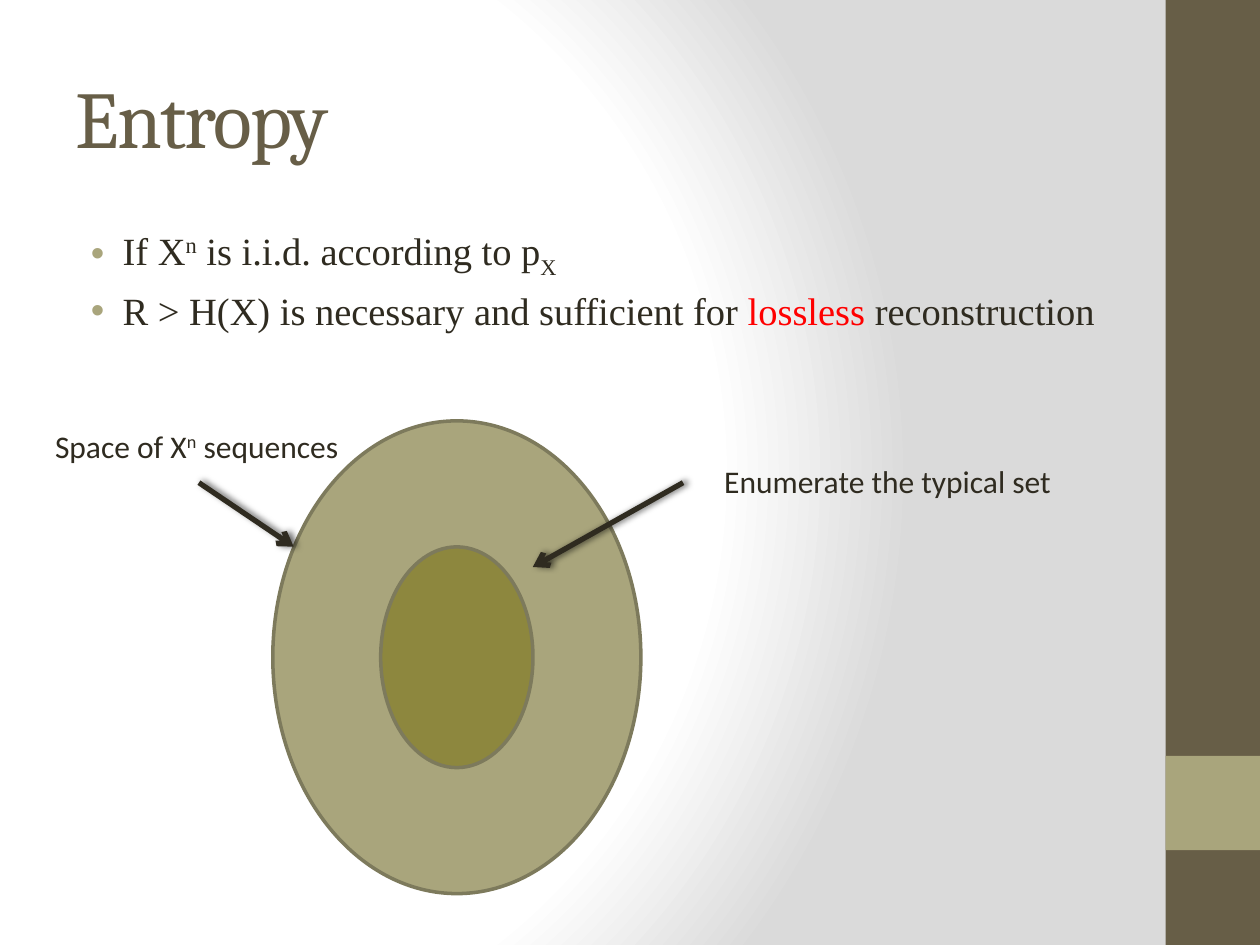
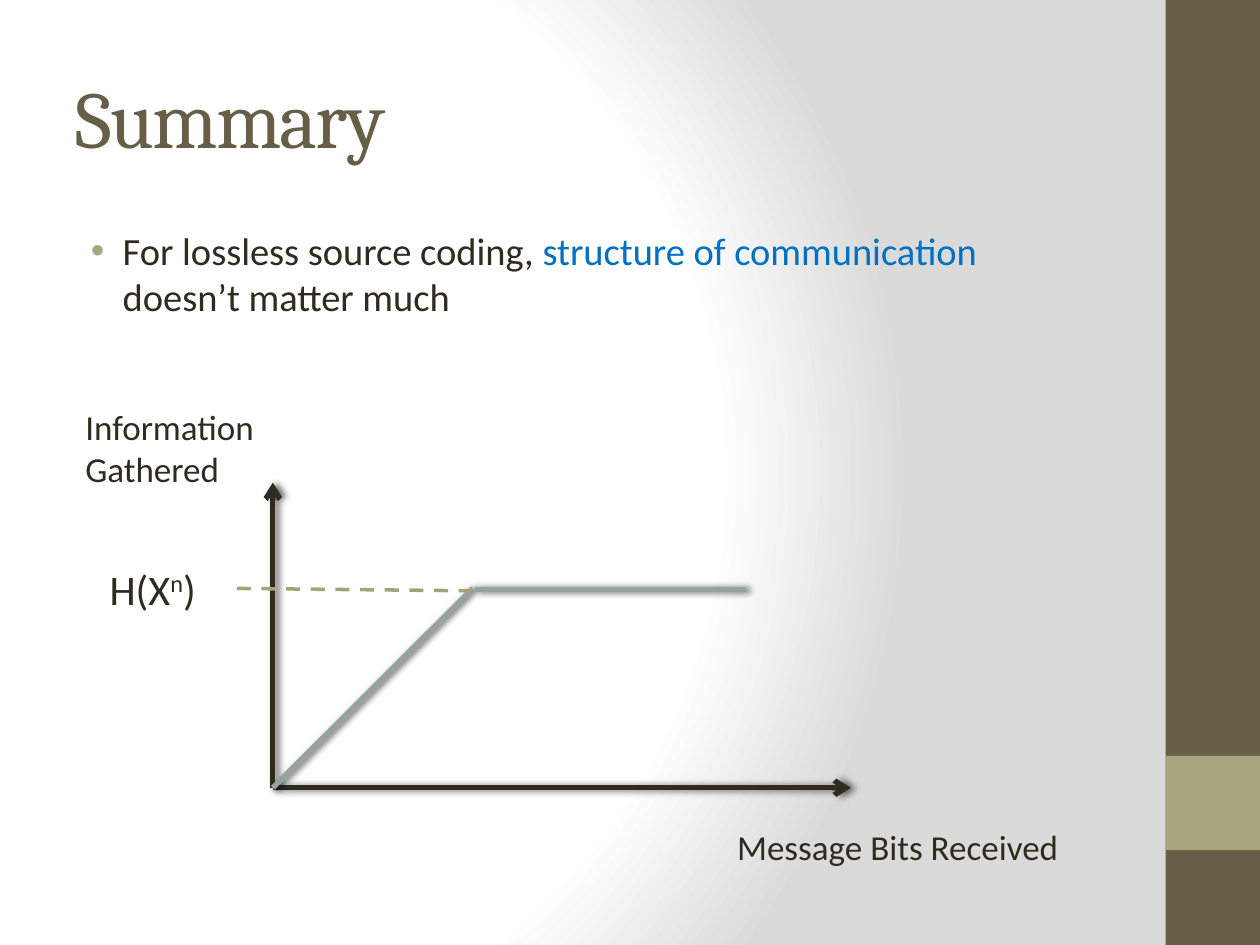
from dataclasses import dataclass

from pptx import Presentation, util as u
from pptx.dml.color import RGBColor
from pptx.enum import dml, shapes, text
from pptx.oxml import parse_xml
from pptx.oxml.ns import nsdecls, qn
from pptx.presentation import Presentation as Deck
from pptx.slide import Slide
from pptx.text.text import TextFrame

SUPERSCRIPT, SUBSCRIPT = 30, -25


@dataclass(frozen=True)
class Theme:
    ink: str = "2F2B20"
    brown: str = "675E47"
    sand: str = "A9A57C"
    olive: str = "8D873E"
    outline: str = "7D7A5C"
    curve: str = "95A39D"
    guide: str = "A6A278"
    red: str = "FF0000"
    blue: str = "0070C0"
    backdrop: tuple[tuple[int, str], ...] = ((0, "FFFFFF"), (75, "FFFFFF"), (100, "DADADA"))
    heading_font: str = "Cambria"
    body_font: str = "Calibri"
    serif_font: str = "Times New Roman"
    title_size: int = 46
    bullet_size: int = 22
    label_size: int = 18
    axis_size: int = 20
    value_size: int = 24


THEME = Theme()


@dataclass(frozen=True)
class Piece:
    """A stretch of text in one colour, raised or lowered by a percentage."""
    words: str
    color: str = THEME.ink
    baseline: int = 0


Line = tuple[Piece, ...]


@dataclass(frozen=True)
class Box:
    """Left, top, width and height in centimetres."""
    left: float
    top: float
    width: float
    height: float

    def lengths(self) -> tuple[u.Length, ...]:
        return tuple(u.Cm(n) for n in (self.left, self.top, self.width, self.height))


@dataclass(frozen=True)
class Label:
    box: Box
    lines: tuple[Line, ...]
    size: int = THEME.label_size


@dataclass(frozen=True)
class Stroke:
    start: tuple[float, float]
    end: tuple[float, float]
    color: str = THEME.ink
    width: int = 3
    arrow: bool = False
    dashed: bool = False
    shadow: bool = True


TITLE_BOX = Box(1.27, 0.76, 21.16, 3.18)
BODY_BOX = Box(1.27, 4.45, 21.16, 13.34)
BANDS = ((Box(23.5, 0, 1.9, 19.05), THEME.brown), (Box(23.5, 15.24, 1.9, 1.9), THEME.sand))


def xml(fragment: str):
    """Parse a fragment whose root tag lacks namespace declarations."""
    head, mark, rest = fragment.partition(" ")
    return parse_xml(f"{head} {nsdecls('a', 'p')}{mark}{rest}")


def fill_lines(frame: TextFrame, lines: tuple[Line, ...], font: str, size: int) -> None:
    for index, line in enumerate(lines):
        paragraph = frame.paragraphs[0] if index == 0 else frame.add_paragraph()
        for piece in line:
            run = paragraph.add_run()
            run.text = piece.words
            run.font.name, run.font.size = font, u.Pt(size)
            run.font.color.rgb = RGBColor.from_string(piece.color)
            if piece.baseline:
                run._r.get_or_add_rPr().set("baseline", str(piece.baseline * 1000))


def place(shape, box: Box) -> None:
    shape.left, shape.top, shape.width, shape.height = box.lengths()


def add_filled(slide: Slide, kind: shapes.MSO_SHAPE, box: Box, color: str, outline: str = ""):
    shape = slide.shapes.add_shape(kind, *box.lengths())
    shape.shadow.inherit = False
    shape.fill.solid()
    shape.fill.fore_color.rgb = RGBColor.from_string(color)
    if outline:
        shape.line.color.rgb = RGBColor.from_string(outline)
        shape.line.width = u.Pt(2)
    else:
        shape.line.fill.background()
    return shape


def add_label(slide: Slide, label: Label) -> None:
    frame = slide.shapes.add_textbox(*label.box.lengths()).text_frame
    frame.word_wrap = False
    frame.auto_size = text.MSO_AUTO_SIZE.SHAPE_TO_FIT_TEXT
    fill_lines(frame, label.lines, THEME.body_font, label.size)


def add_stroke(slide: Slide, stroke: Stroke) -> None:
    ends = (u.Cm(n) for n in stroke.start + stroke.end)
    connector = slide.shapes.add_connector(shapes.MSO_CONNECTOR.STRAIGHT, *ends)
    connector.line.color.rgb = RGBColor.from_string(stroke.color)
    connector.line.width = u.Pt(stroke.width)
    if stroke.dashed:
        connector.line.dash_style = dml.MSO_LINE.DASH
    properties = connector.element.spPr
    if stroke.arrow:
        properties.find(qn("a:ln")).append(xml('<a:tailEnd type="arrow"/>'))
    shadow = (f'<a:outerShdw blurRad="{u.Pt(4)}" dist="{u.Pt(2)}" dir="0" rotWithShape="0">'
              '<a:srgbClr val="000000"><a:alpha val="60000"/></a:srgbClr></a:outerShdw>')
    properties.append(xml(f"<a:effectLst >{shadow if stroke.shadow else ''}</a:effectLst>"))


def style_master(deck: Deck, slide: Slide) -> None:
    """Give the master the gradient backdrop and the side bands, drawn first on a slide."""
    content = deck.slide_master.element.cSld
    for old in content.findall(qn("p:bg")):
        content.remove(old)
    stops = "".join(f'<a:gs pos="{at * 1000}"><a:srgbClr val="{color}"/></a:gs>'
                    for at, color in THEME.backdrop)
    content.insert(0, xml(
        f'<p:bg ><p:bgPr><a:gradFill rotWithShape="1"><a:gsLst>{stops}</a:gsLst>'
        '<a:path path="circle"><a:fillToRect l="20000" t="50000" r="100000" b="50000"/></a:path>'
        '</a:gradFill><a:effectLst/></p:bgPr></p:bg>'))
    for index, (box, color) in enumerate(BANDS):
        band = add_filled(slide, shapes.MSO_SHAPE.RECTANGLE, box, color).element
        band.nvSpPr.cNvPr.set("id", str(100 + index))
        content.spTree.insert(2 + index, band)


def write_title(slide: Slide, title: str) -> None:
    place(slide.shapes.title, TITLE_BOX)
    frame = slide.shapes.title.text_frame
    frame.auto_size = text.MSO_AUTO_SIZE.NONE
    frame.vertical_anchor = text.MSO_ANCHOR.MIDDLE
    fill_lines(frame, ((Piece(title, THEME.brown),),), THEME.heading_font, THEME.title_size)
    paragraph = frame.paragraphs[0]
    paragraph.alignment = text.PP_ALIGN.LEFT
    paragraph.runs[0]._r.get_or_add_rPr().set("spc", "-100")


def write_bullets(slide: Slide, bullets: tuple[Line, ...], font: str) -> None:
    body = slide.placeholders[1]
    place(body, BODY_BOX)
    body.text_frame.auto_size = text.MSO_AUTO_SIZE.NONE
    fill_lines(body.text_frame, bullets, font, THEME.bullet_size)
    for paragraph in body.text_frame.paragraphs:
        properties = paragraph._p.get_or_add_pPr()
        properties.set("marL", str(u.Cm(0.95)))
        properties.set("indent", str(u.Cm(-0.64)))
        for fragment in ('<a:spcBef ><a:spcPct val="20000"/></a:spcBef>',
                         f'<a:buClr ><a:srgbClr val="{THEME.sand}"/></a:buClr>',
                         '<a:buFont typeface="Arial"/>',
                         '<a:buChar char="•"/>'):
            properties.append(xml(fragment))


def draw_entropy(slide: Slide) -> None:
    write_title(slide, "Entropy")
    write_bullets(slide, (
        (Piece("If X"), Piece("n", baseline=SUPERSCRIPT),
         Piece(" is i.i.d. according to p"), Piece("X", baseline=SUBSCRIPT)),
        (Piece("R > H(X) is necessary and sufficient for "),
         Piece("lossless", THEME.red), Piece(" reconstruction")),
    ), THEME.serif_font)

    center_x, center_y = 9.21, 13.25
    for width, height, color in ((7.42, 9.53, THEME.sand), (3.07, 4.45, THEME.olive)):
        box = Box(center_x - width / 2, center_y - height / 2, width, height)
        add_filled(slide, shapes.MSO_SHAPE.OVAL, box, color, THEME.outline)

    arrow_top = 9.73
    add_stroke(slide, Stroke((13.77, arrow_top), (10.74, 11.43), arrow=True))
    add_stroke(slide, Stroke((4.01, arrow_top), (5.92, 11.02), arrow=True))
    add_label(slide, Label(Box(14.35, 9.19, 7.16, 1.02), ((Piece("Enumerate the typical set"),),)))
    add_label(slide, Label(Box(0.86, 8.48, 6.32, 1.02), (
        (Piece("Space of X"), Piece("n", baseline=SUPERSCRIPT), Piece(" sequences")),)))


def draw_summary(slide: Slide) -> None:
    write_title(slide, "Summary")
    write_bullets(slide, (
        (Piece("For lossless source coding, "), Piece("structure of communication ", THEME.blue),
         Piece("doesn’t matter much")),
    ), THEME.body_font)

    origin, knee = (5.5, 15.88), (9.53, 11.86)
    for stroke in (
        Stroke(origin, (17.15, origin[1]), arrow=True),
        Stroke(origin, (origin[0], 9.73), arrow=True),
        Stroke(origin, knee, THEME.curve),
        Stroke((9.58, 11.89), (15.04, 11.89), THEME.curve),
        Stroke((knee[0], 11.91), (4.6, knee[1]), THEME.guide, 2, dashed=True, shadow=False),
    ):
        add_stroke(slide, stroke)

    for label in (
        Label(Box(14.61, 16.51, 7.06, 1.12), ((Piece("Message Bits Received"),),),
              THEME.axis_size),
        Label(Box(1.47, 8.05, 3.94, 1.96), ((Piece("Information"),), (Piece("Gathered"),)),
              THEME.axis_size),
        Label(Box(1.96, 11.23, 2.31, 1.27),
              ((Piece("H(X"), Piece("n", baseline=SUPERSCRIPT), Piece(")")),), THEME.value_size),
    ):
        add_label(slide, label)


def main() -> None:
    deck = Presentation()
    deck.slide_width, deck.slide_height = u.Cm(25.4), u.Cm(19.05)
    entropy, summary = (deck.slides.add_slide(deck.slide_layouts[1]) for _ in range(2))
    style_master(deck, entropy)
    draw_entropy(entropy)
    draw_summary(summary)
    deck.save("out.pptx")


if __name__ == "__main__":
    main()
